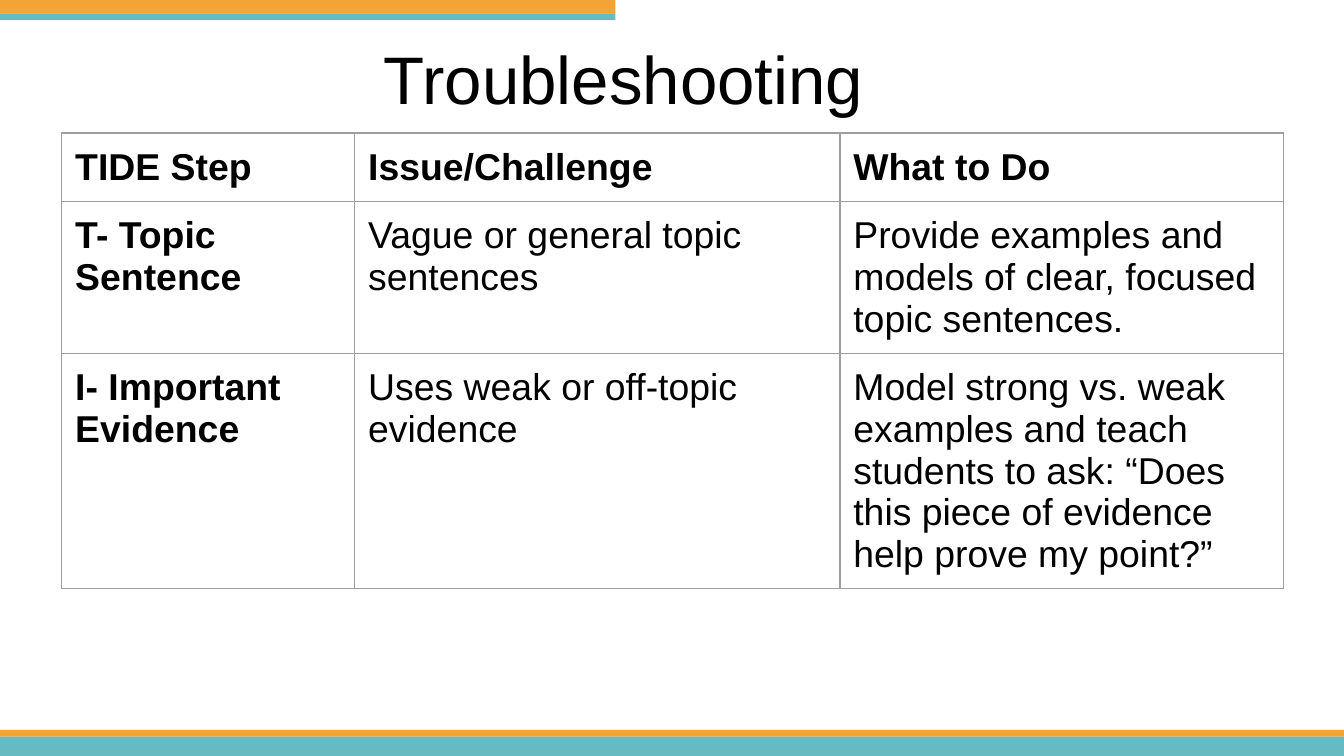
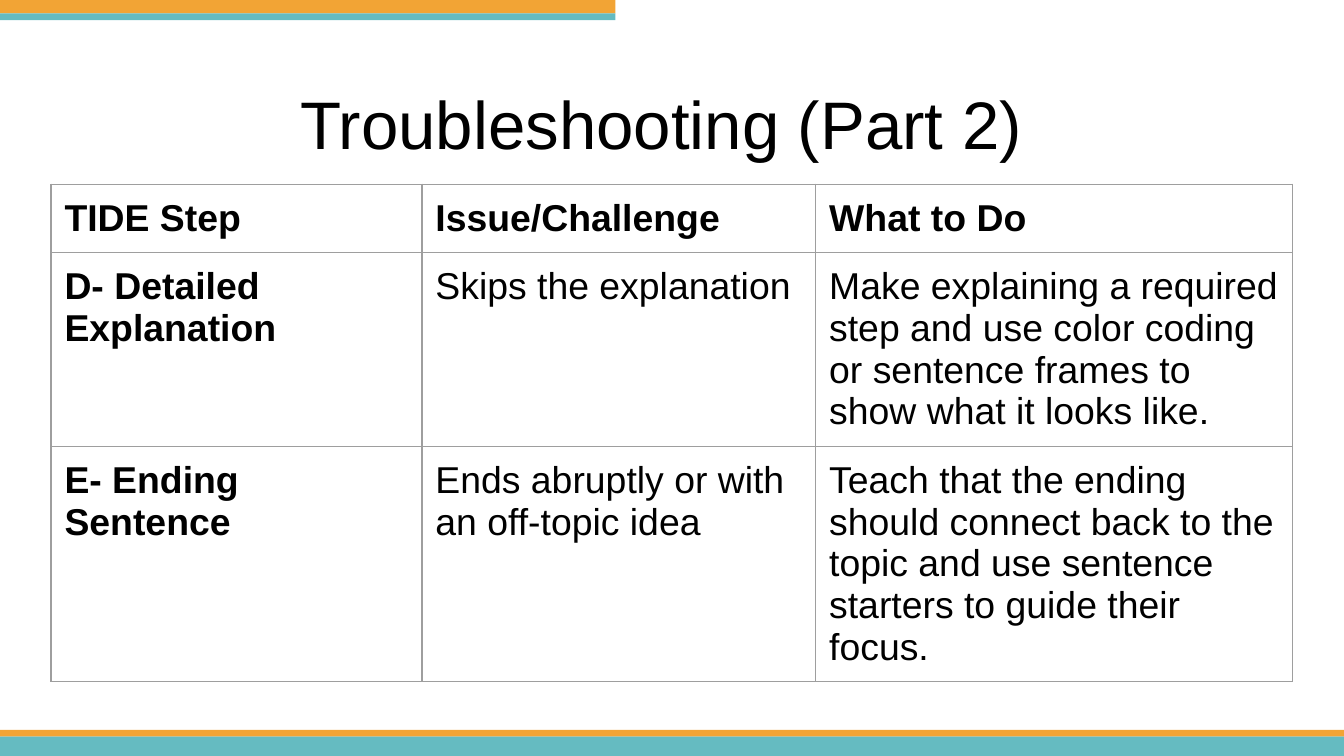
from lxml.etree import SubElement as Sub
from pptx import Presentation
from pptx.dml.color import RGBColor
from pptx.enum.shapes import MSO_SHAPE as Shape
from pptx.enum.text import MSO_ANCHOR as Anchor, MSO_AUTO_SIZE as Fit, PP_ALIGN as Align
from pptx.oxml.ns import qn
from pptx.util import Inches, Pt

TEAL, GOLD, BLACK, GREY = "65BBC1", "F2A435", "000000", "9E9E9E"
FONT = "Arial"
PAD = Inches(0.1)


def color(code):
    return RGBColor.from_string(code)


def write(para, text, size, bold=False):
    run = para.add_run()
    run.text = text
    run.font.name = FONT
    run.font.size = Pt(size)
    run.font.bold = bold
    run.font.color.rgb = color(BLACK)


bands = [
    (0, 5.48, 10, 0.15, TEAL),
    (0, 0, 4.58, 0.1, GOLD),
    (0, 0.1, 4.58, 0.05, TEAL),
    (0, 5.43, 10, 0.05, GOLD),
]
head = ["TIDE Step", "Issue/Challenge", "What to Do"]
pages = [
    ("Troubleshooting ", (0.05, 0.12, 9.32, 0.92), (0.46, 0.99), (2.18, 3.61, 3.3), [
        ["T- Topic Sentence", "Vague or general topic sentences",
         "Provide examples and models of clear, focused topic sentences."],
        ["I- Important Evidence", "Uses weak or off-topic evidence",
         "Model strong vs. weak examples and teach students to ask: "
         "“Does this piece of evidence help prove my point?”"],
    ]),
    ("Troubleshooting (Part 2)", (0.74, 0.45, 8.36, 0.92), (0.38, 1.37), (2.76, 2.93, 3.55), [
        ["D- Detailed Explanation", "Skips the explanation",
         "Make explaining a required step and use color coding or "
         "sentence frames to show what it looks like."],
        ["E- Ending Sentence", "Ends abruptly or with an off-topic idea",
         "Teach that the ending should connect back to the topic and use "
         "sentence starters to guide their focus."],
    ]),
]

deck = Presentation()
deck.slide_width = Inches(10)
deck.slide_height = deck.slide_width * 9 // 16
master = deck.slide_master
master.background.fill.solid()
master.background.fill.fore_color.rgb = color("FFFFFF")

for name, box, spot, widths, body in pages:
    slide = deck.slides.add_slide(deck.slide_layouts.get_by_name("Title Only"))

    title = slide.shapes.title
    title.left, title.top, title.width, title.height = map(Inches, box)
    frame = title.text_frame
    frame.margin_left = frame.margin_right = frame.margin_top = frame.margin_bottom = PAD
    frame.vertical_anchor = Anchor.MIDDLE
    frame.auto_size = Fit.NONE
    frame.word_wrap = True
    frame.paragraphs[0].alignment = Align.CENTER
    write(frame.paragraphs[0], name, 36)

    rows = [head] + body
    left, top = map(Inches, spot)
    table = slide.shapes.add_table(
        len(rows), len(head), left, top, Inches(sum(widths)), Inches(0.42 * len(rows))
    ).table
    table.first_row = table.horz_banding = False
    for col, width in zip(table.columns, widths):
        col.width = Inches(width)
    for r, row in enumerate(rows):
        for c, text in enumerate(row):
            cell = table.cell(r, c)
            cell.margin_left = cell.margin_right = cell.margin_top = cell.margin_bottom = PAD
            props = cell._tc.get_or_add_tcPr()
            for side in ("lnL", "lnR", "lnT", "lnB"):
                line = Sub(props, qn("a:" + side), w=str(Pt(0.75)))
                Sub(Sub(line, qn("a:solidFill")), qn("a:srgbClr"), val=GREY)
            cell.fill.background()
            write(cell.text_frame.paragraphs[0], text, 20, r == 0 or c == 0)

first = deck.slides[0]
for i, (x, y, w, h, tone) in enumerate(bands):
    band = first.shapes.add_shape(Shape.RECTANGLE, Inches(x), Inches(y), Inches(w), Inches(h))
    band.name = f"Band {i + 1}"
    band.shadow.inherit = False
    band.fill.solid()
    band.fill.fore_color.rgb = color(tone)
    band.line.fill.background()
    band.element.nvSpPr.cNvPr.set("id", str(20 + i))
    master.shapes.element.insert(2 + i, band.element)

deck.save("out.pptx")
